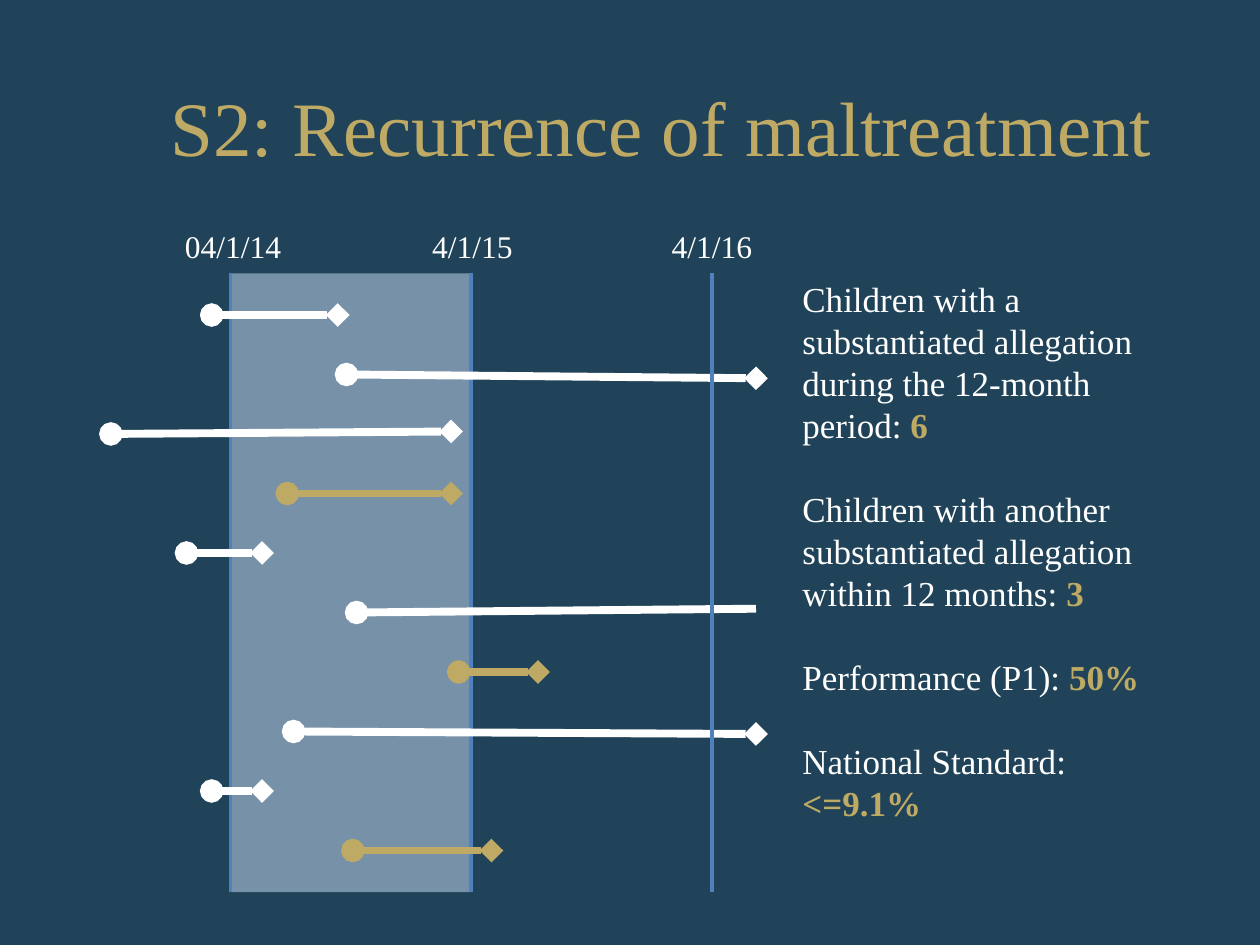
from dataclasses import dataclass

from lxml import etree
from pptx import Presentation
from pptx.dml.color import RGBColor
from pptx.enum.shapes import MSO_CONNECTOR, MSO_SHAPE
from pptx.enum.text import MSO_ANCHOR, MSO_AUTO_SIZE, PP_ALIGN
from pptx.oxml.ns import qn
from pptx.util import Inches, Pt


@dataclass(frozen=True)
class Theme:
    background: str = "204359"
    gold: str = "BEAA64"
    white: str = "FFFFFF"
    period: str = "B9CDE5"
    rule: str = "4F81BD"
    font: str = "Times New Roman"
    title_size: int = 44
    date_size: int = 18
    body_size: int = 20
    body_leading: int = 24
    rule_width: float = 2
    track_width: float = 4.5


THEME = Theme()

# Dates and their horizontal positions
DATES = [("04/1/14", 1.83, 1.85), ("4/1/15", 3.74, 3.75), ("4/1/16", 5.65, 5.65)]

# One child per row: start, end, vertical drift, colour, end marker
TRACKS = [
    (1.68, 2.68, 0, THEME.white, "diamond"),
    (2.75, 6, 0.03, THEME.white, "diamond"),
    (0.88, 3.58, -0.02, THEME.white, "diamond"),
    (2.28, 3.58, 0, THEME.gold, "diamond"),
    (1.48, 2.08, 0, THEME.white, "diamond"),
    (2.83, 6, -0.03, THEME.white, None),
    (3.64, 4.27, 0, THEME.gold, "diamond"),
    (2.33, 6, 0.02, THEME.white, "diamond"),
    (1.68, 2.08, 0, THEME.white, "diamond"),
    (2.8, 3.9, 0, THEME.gold, "diamond"),
]
FIRST_TRACK, LAST_TRACK = 2.5, 6.75

FINDINGS = [
    ("Children with a substantiated allegation during the 12-month period: ", "6"),
    ("Children with another substantiated allegation within 12 months: ", "3"),
    ("Performance (P1): ", "50%"),
    ("National Standard: ", "<=9.1%"),
]


def add_span(para, text, *, size, color, bold=False):
    span = para.add_run()
    span.text = text
    span.font.name = THEME.font
    span.font.size = Pt(size)
    span.font.bold = bold
    span.font.color.rgb = RGBColor.from_string(color)


def add_line(page, start, end, *, color, width, head=None, tail=None):
    points = [Inches(value) for value in (*start, *end)]
    line = page.shapes.add_connector(MSO_CONNECTOR.STRAIGHT, *points)
    line.line.color.rgb = RGBColor.from_string(color)
    line.line.width = Pt(width)
    outline = line.line._get_or_add_ln()
    for tag, marker in (("a:headEnd", head), ("a:tailEnd", tail)):
        if marker:
            etree.SubElement(outline, qn(tag), type=marker)
    etree.SubElement(line._element.spPr, qn("a:effectLst"))


def add_title(page, left, top, width, height):
    title = page.shapes.title
    title.left, title.top = Inches(left), Inches(top)
    title.width, title.height = Inches(width), Inches(height)
    title.text_frame.vertical_anchor = MSO_ANCHOR.MIDDLE
    para = title.text_frame.paragraphs[0]
    para.alignment = PP_ALIGN.CENTER
    para.line_spacing = 1.2
    properties = para._p.get_or_add_pPr()
    properties.set("marL", str(Inches(0.5)))
    properties.set("indent", "0")
    add_span(para, "S2: Recurrence of maltreatment", size=THEME.title_size, color=THEME.gold)


def add_period(page, left, top, width, height):
    period = page.shapes.add_shape(
        MSO_SHAPE.RECTANGLE, Inches(left), Inches(top), Inches(width), Inches(height))
    period.shadow.inherit = False
    period.line.fill.background()
    period.fill.solid()
    period.fill.fore_color.rgb = RGBColor.from_string(THEME.period)
    color = period._element.spPr.find(qn("a:solidFill"))[0]
    etree.SubElement(color, qn("a:alpha"), val="57000")


def add_date(page, date, x, center, top, bottom):
    add_line(page, (x, top), (x, bottom), color=THEME.rule, width=THEME.rule_width)
    box = page.shapes.add_textbox(
        Inches(center - 0.49), Inches(top - 0.42), Inches(0.98), Inches(0.4))
    box.text_frame.word_wrap = False
    para = box.text_frame.paragraphs[0]
    para.alignment = PP_ALIGN.CENTER
    add_span(para, date, size=THEME.date_size, color=THEME.white)


def add_timeline(page, top, bottom):
    # Shaded 12-month period between the first two dates
    start, end = DATES[0][1], DATES[1][1]
    add_period(page, start, top, end - start, bottom - top)
    for date in DATES[:2]:
        add_date(page, *date, top, bottom)

    # Evenly spaced tracks, from first to second event
    step = (LAST_TRACK - FIRST_TRACK) / (len(TRACKS) - 1)
    for row, (start, end, drift, color, tail) in enumerate(TRACKS):
        y = FIRST_TRACK + row * step
        add_line(page, (start, y), (end, y + drift), color=color,
                 width=THEME.track_width, head="oval", tail=tail)

    # The last date lies over the tracks
    add_date(page, *DATES[2], top, bottom)


def add_findings(page, left, top, width, height):
    box = page.shapes.add_textbox(Inches(left), Inches(top), Inches(width), Inches(height))
    frame = box.text_frame
    frame.word_wrap = True
    frame.auto_size = MSO_AUTO_SIZE.SHAPE_TO_FIT_TEXT
    for index, (label, value) in enumerate(FINDINGS):
        para = frame.add_paragraph() if index else frame.paragraphs[0]
        para.line_spacing = Pt(THEME.body_leading)
        para.space_before = Pt(THEME.body_leading if index else 0)
        add_span(para, label, size=THEME.body_size, color=THEME.white)
        add_span(para, value, size=THEME.body_size, color=THEME.gold, bold=True)


def main():
    deck = Presentation()
    deck.slide_width, deck.slide_height = Inches(10), Inches(7.5)
    page = deck.slides.add_slide(deck.slide_layouts[5])
    page.background.fill.solid()
    page.background.fill.fore_color.rgb = RGBColor.from_string(THEME.background)
    add_title(page, 0, 0.3, 10, 1.25)
    add_timeline(page, 2.17, 7.08)
    add_findings(page, 6.27, 2.15, 2.9, 4.48)
    deck.save("out.pptx")


if __name__ == "__main__":
    main()
